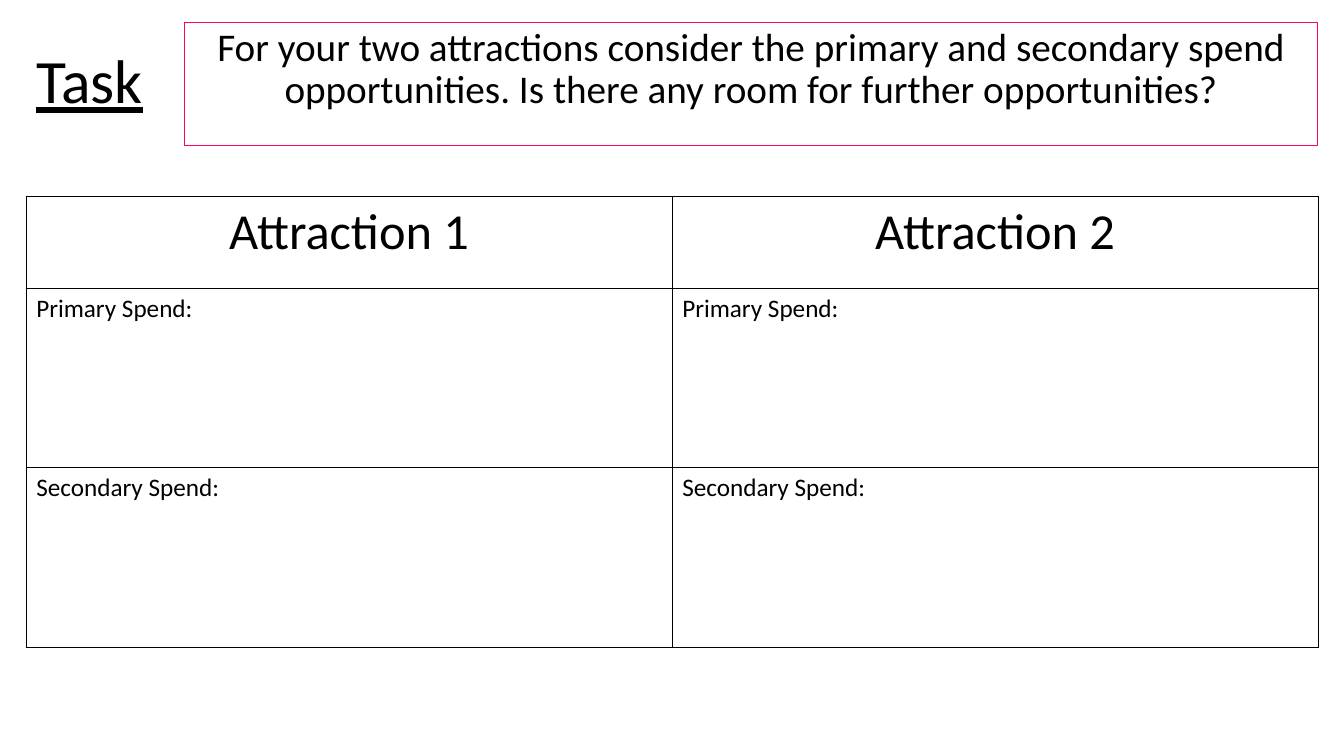
from dataclasses import dataclass

from lxml import etree
from pptx import Presentation
from pptx import util as u
from pptx.dml.color import RGBColor
from pptx.enum import shapes, text
from pptx.oxml import ns

BLACK = RGBColor(0x00, 0x00, 0x00)
WHITE = RGBColor(0xFF, 0xFF, 0xFF)
PINK = RGBColor(0xFF, 0x00, 0x66)
FONT = "Calibri"
LEFT, CENTER = text.PP_ALIGN.LEFT, text.PP_ALIGN.CENTER
TOP, MIDDLE = text.MSO_ANCHOR.TOP, text.MSO_ANCHOR.MIDDLE


@dataclass
class Box:
    left: float
    top: float
    width: float
    height: float

    def place(self) -> list:
        return [u.Cm(n) for n in (self.left, self.top, self.width, self.height)]


@dataclass
class Row:
    height: float
    labels: tuple[str, str]
    size: int
    align: text.PP_ALIGN


TASK = Box(0.66, 0.25, 4.37, 3.71)
BRIEF = Box(4.65, 0.56, 28.55, 3.1)
GRID = Box(0.66, 4.95, 32.56, 11.36)
ROWS = [
    Row(2.32, ("Attraction 1", "Attraction 2"), 36, CENTER),
    Row(4.52, ("Primary Spend:",) * 2, 18, LEFT),
    Row(4.52, ("Secondary Spend:",) * 2, 18, LEFT),
]


def write(frame, words: str, *, size: int, align=LEFT, line: float = 1.0,
          under: bool = False) -> None:
    frame.word_wrap = True
    para = frame.paragraphs[0]
    para.alignment = align
    para.line_spacing = line
    run = para.add_run()
    run.text = words
    font = run.font
    font.name = FONT
    font.size = u.Pt(size)
    font.color.rgb = BLACK
    font.underline = under


def edge(cell) -> None:
    """Give the cell a thin black line on all four sides."""
    props = cell._tc.get_or_add_tcPr()
    for spot, side in enumerate(("lnL", "lnR", "lnT", "lnB")):
        line = etree.Element(ns.qn(f"a:{side}"), w=str(u.Pt(1)))
        fill = etree.SubElement(line, ns.qn("a:solidFill"))
        etree.SubElement(fill, ns.qn("a:srgbClr"), val=str(BLACK))
        props.insert(spot, line)


def add_task(slide) -> None:
    frame = slide.shapes.add_textbox(*TASK.place()).text_frame
    frame.vertical_anchor = MIDDLE
    write(frame, "Task", size=44, line=0.9, under=True)


def add_brief(slide) -> None:
    brief = slide.shapes.add_shape(shapes.MSO_SHAPE.RECTANGLE, *BRIEF.place())
    brief.shadow.inherit = False
    brief.fill.background()
    brief.line.color.rgb = PINK
    brief.line.width = u.Pt(0.75)
    brief.text_frame.vertical_anchor = TOP
    write(brief.text_frame,
          "For your two attractions consider the primary and secondary spend "
          "opportunities. Is there any room for further opportunities?",
          size=28, align=CENTER, line=0.9)


def add_grid(slide) -> None:
    count = len(ROWS[0].labels)
    table = slide.shapes.add_table(len(ROWS), count, *GRID.place()).table
    for col in table.columns:
        col.width = u.Cm(GRID.width / count)
    for r, row in enumerate(ROWS):
        table.rows[r].height = u.Cm(row.height)
        for c, label in enumerate(row.labels):
            cell = table.cell(r, c)
            cell.fill.solid()
            cell.fill.fore_color.rgb = WHITE
            edge(cell)
            write(cell.text_frame, label, size=row.size, align=row.align)


def main() -> None:
    deck = Presentation()
    deck.slide_width, deck.slide_height = u.Cm(33.87), u.Cm(19.05)
    slide = deck.slides.add_slide(deck.slide_layouts[6])
    add_task(slide)
    add_brief(slide)
    add_grid(slide)
    deck.save("out.pptx")


if __name__ == "__main__":
    main()
